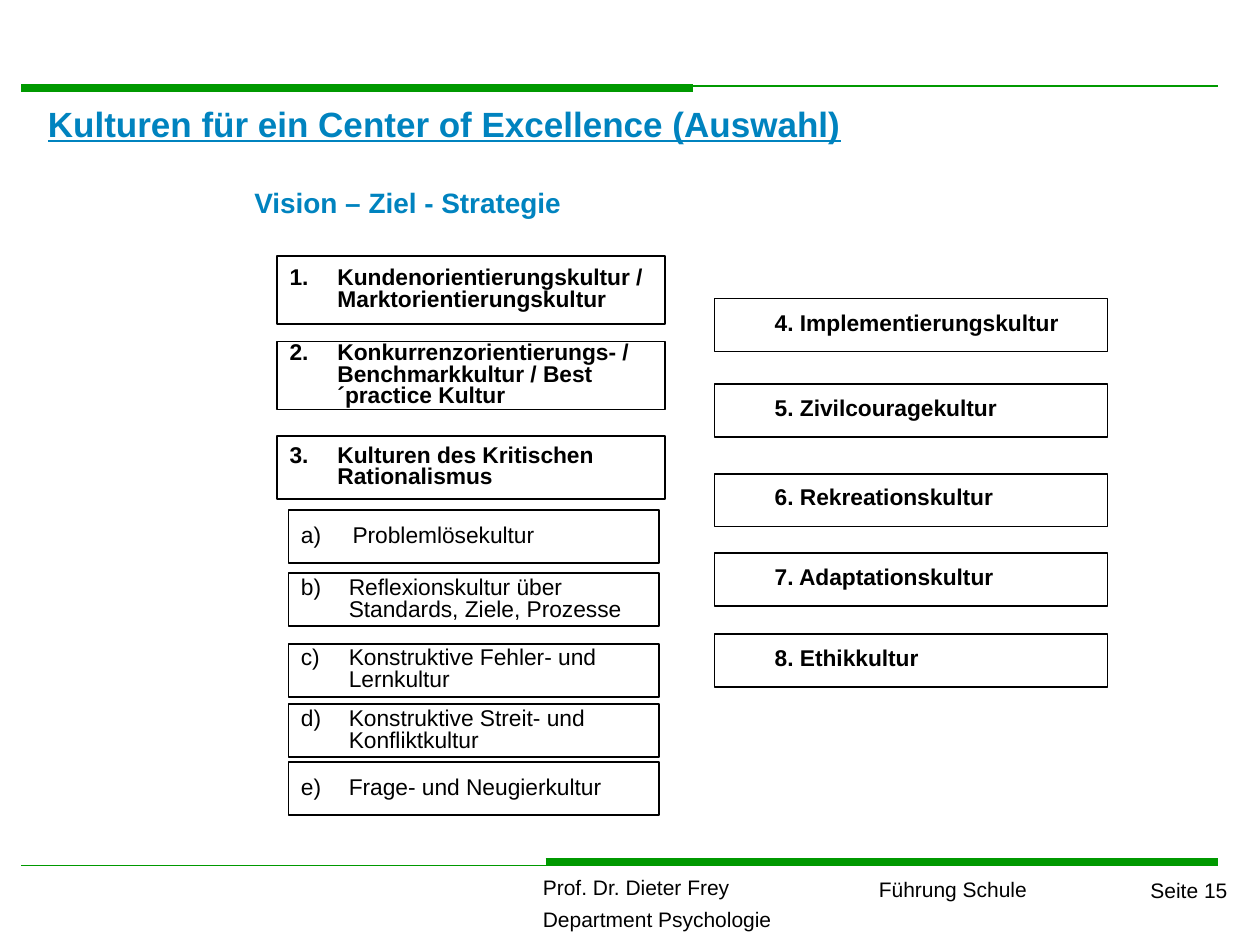
import pptx
import pptx.dml.color
import pptx.enum.shapes
import pptx.enum.text
import pptx.oxml
import pptx.util
from dataclasses import dataclass

Inches = pptx.util.Inches
Pt = pptx.util.Pt
Align = pptx.enum.text.PP_ALIGN
Anchor = pptx.enum.text.MSO_ANCHOR


@dataclass(frozen=True)
class Theme:
    font: str = "Arial"
    heading: str = "0083BF"
    text: str = "000000"
    rule: str = "009900"
    paper: str = "FFFFFF"
    title_size: float = 20
    subtitle_size: float = 16
    box_size: float = 13
    footer_size: float = 12


theme = Theme()


def rgb(value):
    return pptx.dml.color.RGBColor.from_string(value)


def write(shape, text, size, color=theme.text, bold=False, underline=False,
          align=Align.LEFT, anchor=Anchor.TOP, spacing=1.0, gap=0,
          left=0, hanging=0):
    """Fill a shape with one paragraph per line; left and hanging are in inches."""
    frame = shape.text_frame
    frame.word_wrap = True
    frame.vertical_anchor = anchor
    frame.text = text
    for number, paragraph in enumerate(frame.paragraphs):
        properties = paragraph._p.get_or_add_pPr()
        properties.set("marL", str(Inches(left)))
        properties.set("indent", str(-Inches(hanging)))
        paragraph.alignment = align
        paragraph.line_spacing = spacing
        paragraph.space_before = Pt(gap if number else 0)
        for run in paragraph.runs:
            run.font.name = theme.font
            run.font.size = Pt(size)
            run.font.bold = bold
            run.font.underline = underline
            run.font.color.rgb = rgb(color)


prs = pptx.Presentation()
prs.slide_width, prs.slide_height = Inches(10), Inches(7.5)
slide = prs.slides.add_slide(prs.slide_layouts[5])
shapes = slide.shapes

# Green rules above the title and above the footer
for start, end, y, weight in [
    (3.83, 9.67, 0.68, 1),
    (0.17, 5.5, 0.7, 4.5),
    (0.17, 6.17, 6.87, 1),
    (4.33, 9.67, 6.84, 4.5),
]:
    rule = shapes.add_connector(
        pptx.enum.shapes.MSO_CONNECTOR.STRAIGHT,
        Inches(start), Inches(y), Inches(end), Inches(y))
    rule.line.color.rgb = rgb(theme.rule)
    rule.line.width = Pt(weight)
    rule._element.spPr.append(pptx.oxml.parse_xml(
        '<a:effectLst xmlns:a="http://schemas.openxmlformats.org/drawingml/2006/main"/>'))

# Footer
for text, x, y, width, height, align, spacing in [
    ("Führung Schule", 6.02, 6.95, 2.23, 0.26, Align.RIGHT, 0.8),
    ("Prof. Dr. Dieter Frey\nDepartment Psychologie",
     4.21, 6.93, 3.62, 0.52, Align.LEFT, 0.8),
    ("Seite 15", 7.92, 6.97, 1.92, 0.24, Align.RIGHT, 0.7),
]:
    footer = shapes.add_textbox(Inches(x), Inches(y), Inches(width), Inches(height))
    write(footer, text, theme.footer_size, align=align, spacing=spacing, gap=6.6)

# Headings
title = shapes.title
title.left, title.top = Inches(0.28), Inches(0.76)
title.width, title.height = Inches(8.42), Inches(0.5)
title.fill.solid()
title.fill.fore_color.rgb = rgb(theme.paper)
write(title, "Kulturen für ein Center of Excellence (Auswahl)", theme.title_size,
      color=theme.heading, bold=True, underline=True)

vision = shapes.add_textbox(Inches(1.92), Inches(1.42), Inches(3.75), Inches(0.37))
write(vision, "Vision – Ziel - Strategie", theme.subtitle_size,
      color=theme.heading, bold=True)

# Columns of boxes: left edge, width, text format, then (text, top, height)
numbered = dict(bold=True, spacing=0.8, left=0.38, hanging=0.38)
lettered = dict(numbered, bold=False)
indented = dict(bold=True, spacing=0.7, left=0.38)
columns = [
    (2.2, 3.08, numbered, [
        ("1.\tKundenorientierungskultur / Marktorientierungskultur", 2.03, 0.54),
        ("2.\tKonkurrenzorientierungs- / Benchmarkkultur / Best ´practice Kultur",
         2.71, 0.54),
        ("3.\tKulturen des Kritischen Rationalismus", 3.46, 0.5),
    ]),
    (2.29, 2.94, dict(lettered, left=0.41, hanging=0.41), [
        ("a)\tProblemlösekultur", 4.05, 0.42),
    ]),
    (2.29, 2.94, lettered, [
        ("b)\tReflexionskultur über Standards, Ziele, Prozesse", 4.55, 0.42),
        ("c)\tKonstruktive Fehler- und Lernkultur", 5.11, 0.42),
        ("d)\tKonstruktive Streit- und Konfliktkultur", 5.59, 0.42),
        ("e)\tFrage- und Neugierkultur", 6.05, 0.42),
    ]),
    (5.67, 3.12, dict(indented, spacing=0.8), [
        ("4. Implementierungskultur", 2.37, 0.42),
    ]),
    (5.67, 3.12, indented, [
        ("5. Zivilcouragekultur", 3.05, 0.42),
        ("6. Rekreationskultur", 3.76, 0.42),
        ("7. Adaptationskultur", 4.39, 0.42),
        ("8. Ethikkultur", 5.03, 0.42),
    ]),
]
for x, width, text_format, cultures in columns:
    for text, y, height in cultures:
        culture = shapes.add_shape(
            pptx.enum.shapes.MSO_SHAPE.RECTANGLE,
            Inches(x), Inches(y), Inches(width), Inches(height))
        culture.shadow.inherit = False
        culture.fill.background()
        culture.line.color.rgb = rgb(theme.text)
        culture.line.width = Pt(1)
        write(culture, text, theme.box_size, anchor=Anchor.MIDDLE, **text_format)

prs.save("out.pptx")
